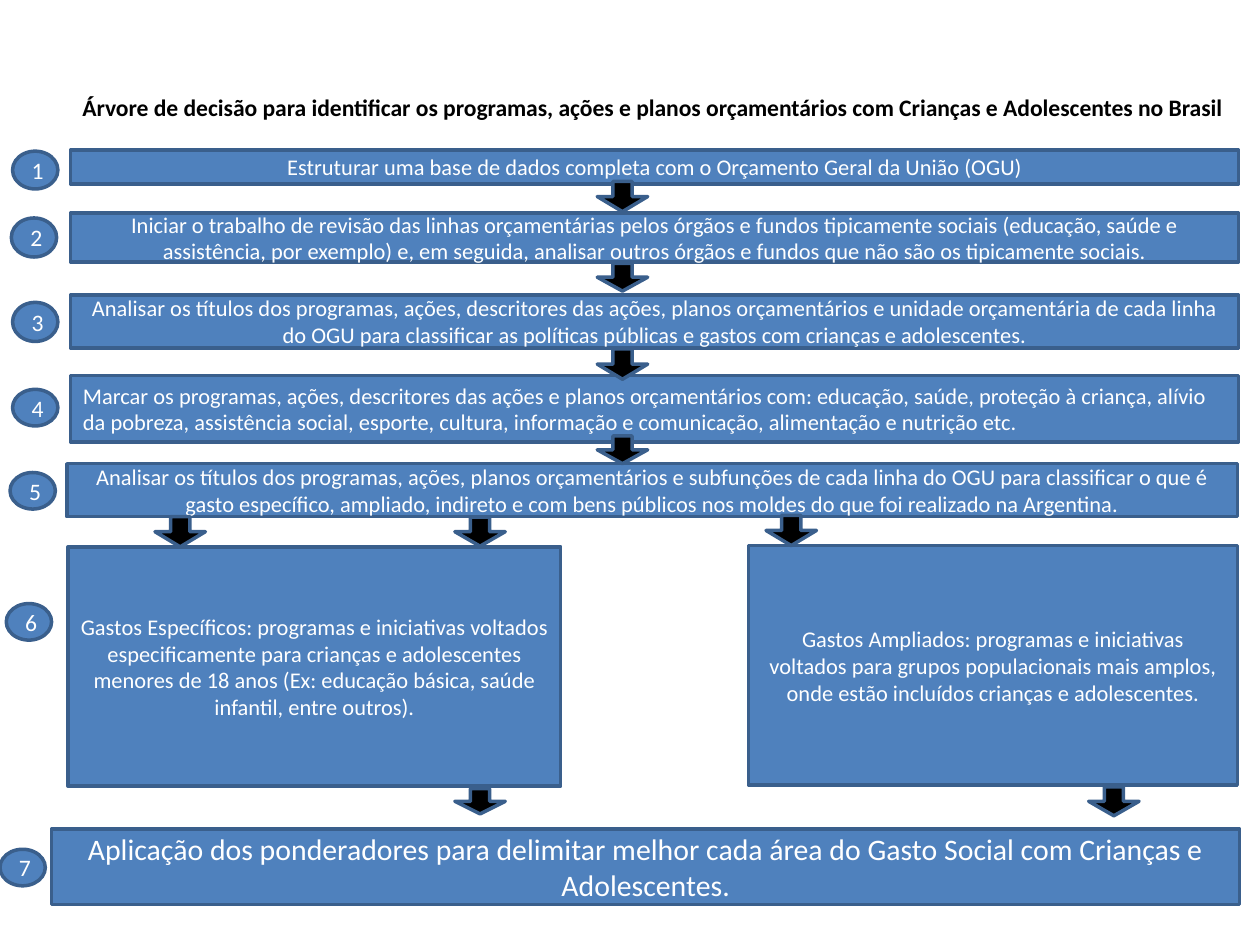
"""Build a decision-tree slide on budget programmes for children and adolescents."""
from dataclasses import dataclass

from pptx import Presentation
from pptx.dml.color import RGBColor
from pptx.enum.shapes import MSO_SHAPE
from pptx.enum.text import MSO_ANCHOR, MSO_AUTO_SIZE, PP_ALIGN
from pptx.util import Inches, Pt

TITLE = ("Árvore de decisão para identificar os programas, ações e planos "
         "orçamentários com Crianças e Adolescentes no Brasil")

BOXES = [
    ((0.56, 1.19, 9.27, 0.27),
     "Estruturar uma base de dados completa com o Orçamento Geral da União (OGU)"),
    ((0.56, 1.69, 9.27, 0.39),
     "Iniciar o trabalho de revisão das linhas orçamentárias pelos órgãos e fundos "
     "tipicamente sociais (educação, saúde e assistência, por exemplo) e, em seguida, "
     "analisar outros órgãos e fundos que não são os tipicamente sociais."),
    ((0.56, 2.34, 9.27, 0.42),
     "Analisar os títulos dos programas, ações, descritores das ações, planos "
     "orçamentários e unidade orçamentária de cada linha do OGU para classificar as "
     "políticas públicas e gastos com crianças e adolescentes."),
    ((0.53, 3.68, 9.29, 0.42),
     "Analisar os títulos dos programas, ações, planos orçamentários e subfunções de "
     "cada linha do OGU para classificar o que é gasto específico, ampliado, indireto "
     "e com bens públicos nos moldes do que foi realizado na Argentina."),
    ((0.54, 4.34, 3.91, 1.9),
     "Gastos Específicos: programas e iniciativas voltados especificamente para "
     "crianças e adolescentes menores de 18 anos (Ex: educação básica, saúde infantil, "
     "entre outros)."),
    ((5.94, 4.33, 3.88, 1.9),
     "Gastos Ampliados: programas e iniciativas voltados para grupos populacionais "
     "mais amplos, onde estão incluídos crianças e adolescentes."),
]
MARKING = ((0.56, 2.98, 9.27, 0.53),
           "Marcar os programas, ações, descritores das ações e planos orçamentários "
           "com: educação, saúde, proteção à criança, alívio da pobreza, assistência "
           "social, esporte, cultura, informação e comunicação, alimentação e nutrição etc.")
RESULT = ((0.41, 6.58, 9.43, 0.6),
          "Aplicação dos ponderadores para delimitar melhor cada área do Gasto Social "
          "com Crianças e Adolescentes.")

BADGES = [(0.1, 1.2, 0.3), (0.09, 1.73, 0.31), (0.1, 2.4, 0.31), (0.1, 3.09, 0.29),
          (0.08, 3.75, 0.29), (0.05, 4.79, 0.29), (0, 6.74, 0.29)]
BADGE_WIDTH = 0.36

ARROWS = [(4.94, 1.56, 0.24), (4.94, 2.2, 0.22), (4.94, 2.89, 0.24), (4.94, 3.57, 0.22),
          (1.43, 4.22, 0.24), (3.81, 4.22, 0.23), (6.28, 4.21, 0.24),
          (3.81, 6.36, 0.2), (8.84, 6.36, 0.23)]
ARROW_SPAN = 0.4


@dataclass(frozen=True)
class Theme:
    font: str = "Calibri"
    fill: RGBColor = RGBColor(0x4F, 0x81, 0xBD)
    line: RGBColor = RGBColor(0x3A, 0x5F, 0x8C)
    dark: RGBColor = RGBColor(0, 0, 0)
    light: RGBColor = RGBColor(0xFF, 0xFF, 0xFF)
    line_pt: float = 2
    title_pt: float = 13.5
    body_pt: float = 12.8
    result_pt: float = 17


THEME = Theme()


def write(sp, text, size, color, align=PP_ALIGN.CENTER, anchor=MSO_ANCHOR.MIDDLE, bold=False):
    tf = sp.text_frame
    tf.text = text
    tf.word_wrap = True
    tf.auto_size = MSO_AUTO_SIZE.NONE
    tf.vertical_anchor = anchor
    p = tf.paragraphs[0]
    p.alignment = align
    p.font.name = THEME.font
    p.font.size = Pt(size)
    p.font.bold = bold
    p.font.color.rgb = color


def add_figure(s, kind, at, fill):
    sp = s.shapes.add_shape(kind, *map(Inches, at))
    sp.shadow.inherit = False
    sp.fill.solid()
    sp.fill.fore_color.rgb = fill
    sp.line.color.rgb = THEME.line
    sp.line.width = Pt(THEME.line_pt)
    return sp


def add_box(s, at, text, size=THEME.body_pt, kind=MSO_SHAPE.RECTANGLE, **layout):
    write(add_figure(s, kind, at, THEME.fill), text, size, THEME.light, **layout)


def add_down_arrow(s, cx, cy, length):
    at = (cx - length / 2, cy - ARROW_SPAN / 2, length, ARROW_SPAN)
    sp = add_figure(s, MSO_SHAPE.RIGHT_ARROW, at, THEME.dark)
    sp.rotation = 90
    sp.adjustments[0] = 0.38
    sp.adjustments[1] = 0.5


def main():
    prs = Presentation()
    prs.slide_width, prs.slide_height = Inches(10), Inches(7.5)
    s = prs.slides.add_slide(prs.slide_layouts[5])

    title = s.shapes.title
    title.left, title.top, title.width, title.height = map(Inches, (0.18, 0.69, 10, 0.33))
    write(title, TITLE, THEME.title_pt, THEME.dark, anchor=MSO_ANCHOR.TOP, bold=True)

    for at, text in BOXES:
        add_box(s, at, text)
    add_box(s, *MARKING, align=PP_ALIGN.LEFT, anchor=MSO_ANCHOR.TOP)
    add_box(s, *RESULT, size=THEME.result_pt)

    for number, (left, top, height) in enumerate(BADGES, 1):
        add_box(s, (left, top, BADGE_WIDTH, height), str(number), THEME.title_pt, MSO_SHAPE.OVAL)
    for arrow in ARROWS:
        add_down_arrow(s, *arrow)

    prs.save("out.pptx")


if __name__ == "__main__":
    main()
